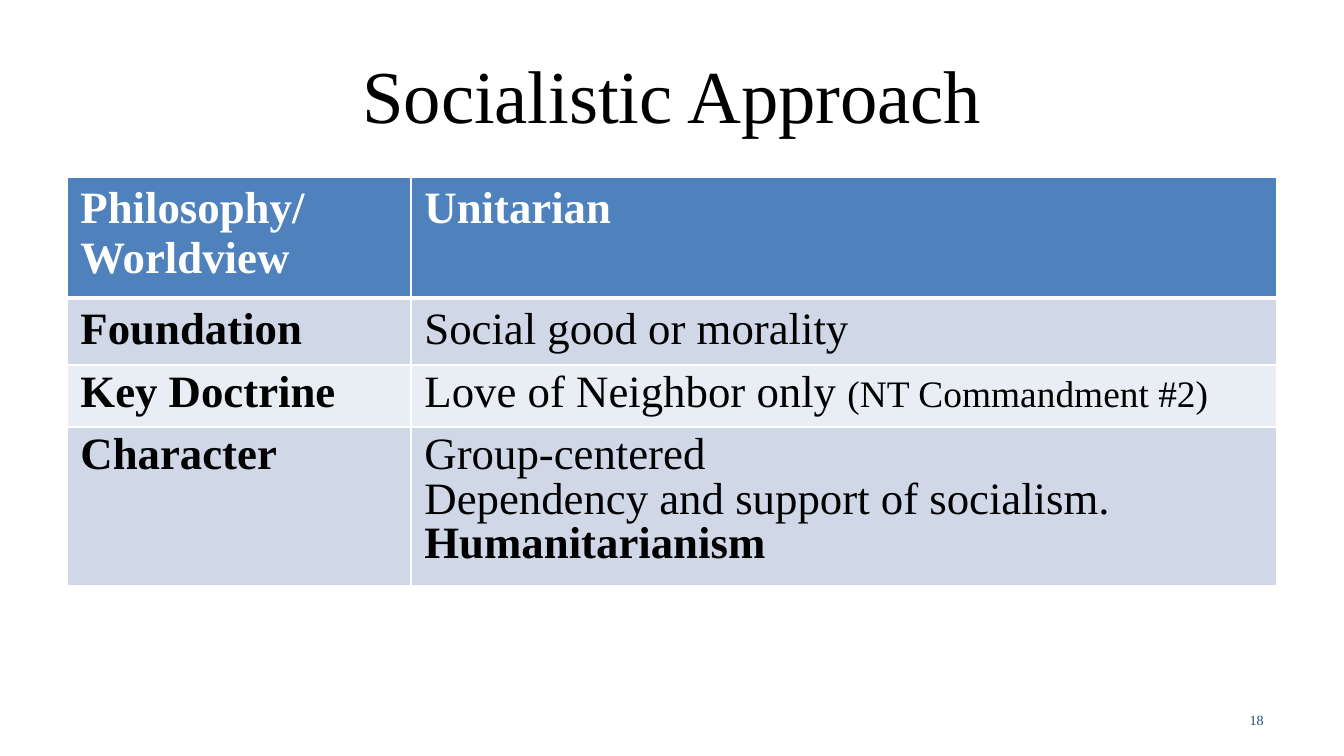
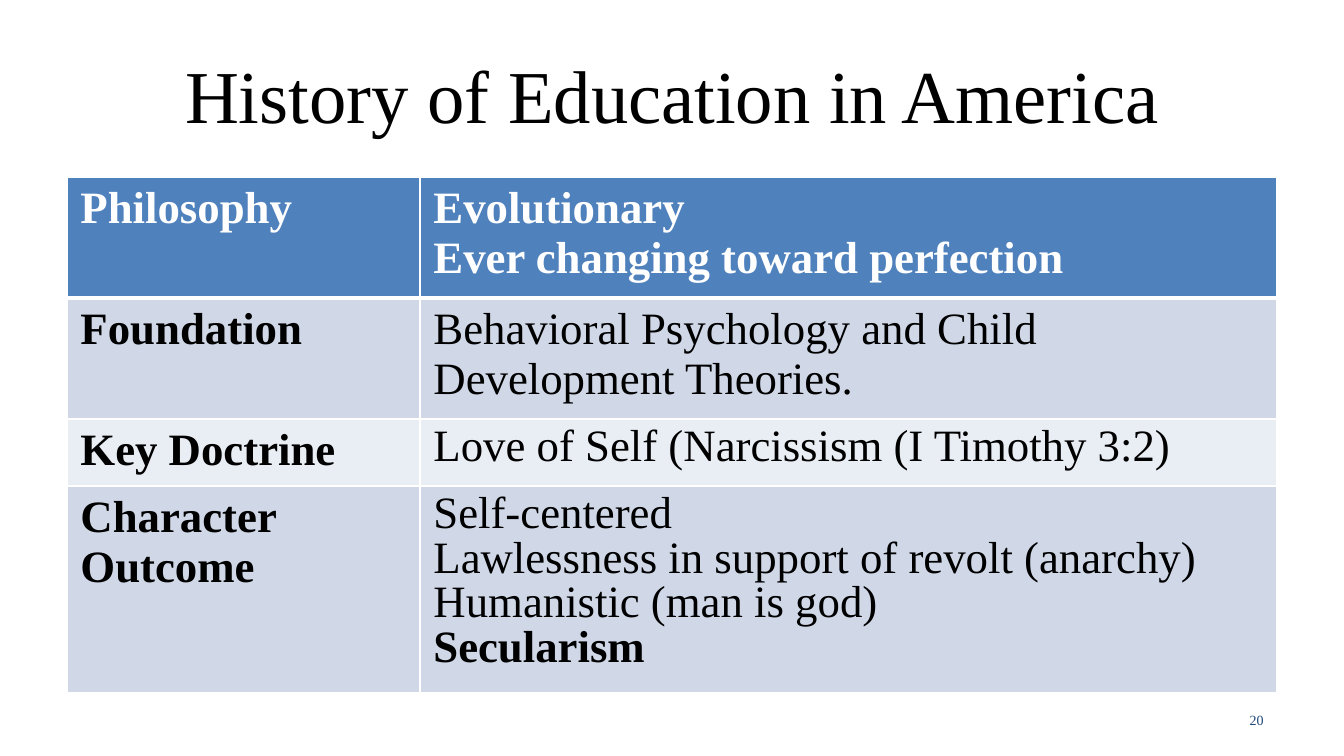
import pptx
import pptx.util
import pptx.dml.color
import pptx.enum.text
import pptx.oxml.ns
import lxml.etree

PX = 914400 / 134.4
FACE = "Times New Roman"
INK = {"text": "000000", "head": "4F81BD", "odd": "D0D8E8",
       "even": "E9EDF4", "line": "FFFFFF", "page": "1F497D"}
ALIGN = pptx.enum.text.PP_ALIGN
TITLE = (67, 31, 1210, 126)
GRID = (67, 177, 1210)
PAGE = (964, 700, 313, 40)

# Each row: height, label, label spacing, lines, line spacing.
DECK = [
    {"title": "Socialistic Approach", "page": "18", "split": 344, "rows": [
        (111, "Philosophy/ Worldview", 1, ["Unitarian"], 1),
        (63, "Foundation", 1, ["Social good or morality"], 1),
        (58, "Key Doctrine", 0.9,
         [[("Love of Neighbor only ", {}),
           ("(NT Commandment #2)", {"size": 20})]], 0.9),
        (146, "Character", 0.9,
         ["Group-centered", "Dependency and support of socialism.",
          [("Humanitarianism", {"bold": True})]], 0.9)]},
    {"title": "History of Education in America", "page": "20", "split": 353,
     "rows": [
        (111, "Philosophy", 1,
         ["Evolutionary", "Ever changing toward perfection"], 1),
        (113, "Foundation", 1,
         ["Behavioral Psychology and Child Development Theories."], 1),
        (63, "Key Doctrine", 1,
         ["Love of Self (Narcissism (I Timothy 3:2)"], 0.9),
        (191, "Character Outcome", 1,
         ["Self-centered", "Lawlessness in support of revolt (anarchy)",
          "Humanistic (man is god)", [("Secularism", {"bold": True})]], 0.9)]},
]


def emu(px):
    """Turn px into EMU."""
    return pptx.util.Emu(round(px * PX))


def rgb(name):
    """Look up a colour by name."""
    return pptx.dml.color.RGBColor.from_string(INK[name])


def write(frame, lines, look, align=ALIGN.LEFT, space=1):
    """Fill a text frame with lines of one look, with changes by run."""
    for num, line in enumerate(lines):
        para = frame.add_paragraph() if num else frame.paragraphs[0]
        para.alignment = align
        para.line_spacing = space
        for text, extra in [(line, {})] if isinstance(line, str) else line:
            run = para.add_run()
            run.text = text
            style = {"name": FACE, **look, **extra}
            run.font.color.rgb = rgb(style.pop("ink"))
            style["size"] = pptx.util.Pt(style["size"])
            for key, value in style.items():
                setattr(run.font, key, value)


def label(slide, box, text, look, align):
    """Place one line of text, centred in height, in a box."""
    frame = slide.shapes.add_textbox(*map(emu, box)).text_frame
    frame.word_wrap = True
    frame.vertical_anchor = pptx.enum.text.MSO_ANCHOR.MIDDLE
    write(frame, [text], look, align)


def edge(cell, sides):
    """Draw the borders of a cell, given widths by side."""
    props = cell._tc.get_or_add_tcPr()
    for side, width in sides.items():
        line = lxml.etree.SubElement(
            props, pptx.oxml.ns.qn("a:ln" + side), w=str(pptx.util.Pt(width)))
        fill = lxml.etree.SubElement(line, pptx.oxml.ns.qn("a:solidFill"))
        lxml.etree.SubElement(
            fill, pptx.oxml.ns.qn("a:srgbClr"), val=INK["line"])


def grid(slide, box, split, rows):
    """Build the two-column table in a box."""
    left, top, width = box
    high = sum(row[0] for row in rows)
    table = slide.shapes.add_table(
        len(rows), 2, *map(emu, (left, top, width, high))).table
    for col, size in zip(table.columns, (split, width - split)):
        col.width = emu(size)
    for num, (tall, name, gap, lines, space) in enumerate(rows):
        table.rows[num].height = emu(tall)
        band = "head" if num == 0 else "odd" if num % 2 else "even"
        sides = {"L": 1, "R": 1, "T": 3 if num == 1 else 1,
                 "B": 1 if num else 3}
        for col, (text, lead) in enumerate((([name], gap), (lines, space))):
            cell = table.cell(num, col)
            edge(cell, sides)
            cell.fill.solid()
            cell.fill.fore_color.rgb = rgb(band)
            look = {"size": 24, "ink": "text" if num else "line",
                    "bold": num == 0 or col == 0}
            write(cell.text_frame, text, look, space=lead)


def page(deck, data):
    """Add one slide with its title, table and number."""
    slide = deck.slides.add_slide(deck.slide_layouts[6])
    label(slide, PAGE, data["page"], {"size": 7.5, "ink": "page"}, ALIGN.RIGHT)
    label(slide, TITLE, data["title"], {"size": 40, "ink": "text"},
          ALIGN.CENTER)
    grid(slide, GRID, data["split"], data["rows"])


def main():
    """Build and save the deck."""
    deck = pptx.Presentation()
    deck.slide_width, deck.slide_height = emu(1344), emu(756)
    for data in DECK:
        page(deck, data)
    deck.save("out.pptx")


if __name__ == "__main__":
    main()
